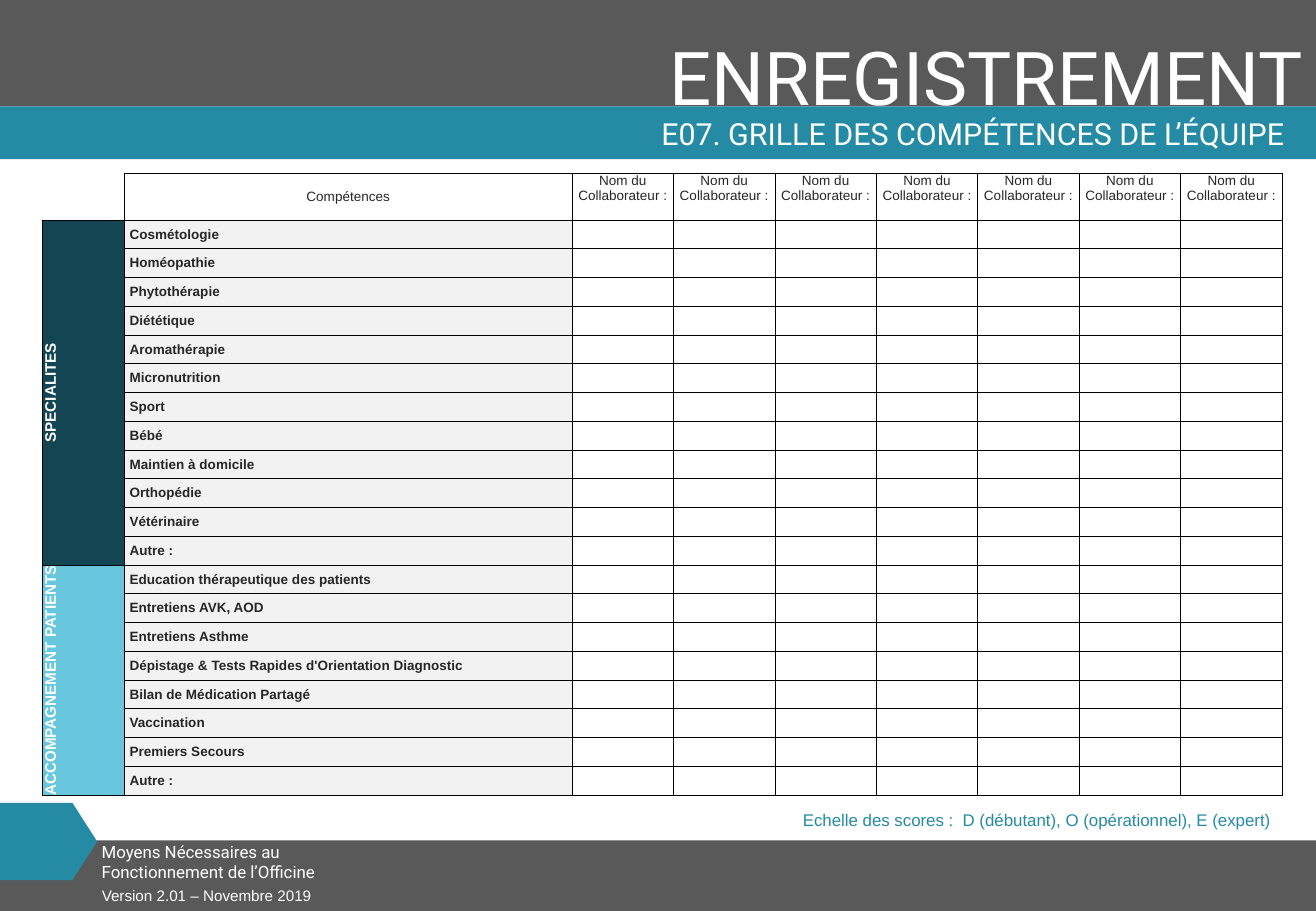
from dataclasses import dataclass

import pptx
import pptx.dml.color
import pptx.enum.shapes
import pptx.enum.text
import pptx.oxml
import pptx.oxml.ns
import pptx.util

Pt = pptx.util.Pt
RGB = pptx.dml.color.RGBColor.from_string
ALIGN = pptx.enum.text.PP_ALIGN
ANCHOR = pptx.enum.text.MSO_ANCHOR
SHAPE = pptx.enum.shapes.MSO_SHAPE


@dataclass(frozen=True)
class Theme:
    grey: str = "595959"
    teal: str = "258BA4"
    navy: str = "134552"
    sky: str = "68C6DD"
    pale: str = "F2F2F2"
    ink: str = "262626"
    white: str = "FFFFFF"
    black: str = "000000"
    heading: str = "Roboto"
    body: str = "Arial"
    banner_size: int = 44
    title_size: int = 18
    note_size: int = 10
    group_size: int = 9
    cell_size: int = 8


theme = Theme()


def write(tf, text, size, color, font=theme.body, align=ALIGN.LEFT, bold=False):
    """Fill a text frame with one formatted paragraph and return it."""
    p = tf.paragraphs[0]
    p.text = text
    p.alignment = align
    for r in p.runs:
        r.font.size = Pt(size)
        r.font.name = font
        r.font.bold = bold
        r.font.color.rgb = RGB(color)
    return p


def style_cell(cell, sides, fill=None, inset=0, anchor=ANCHOR.MIDDLE):
    """Set margins, anchor, fill and the thin borders on the given sides."""
    cell.margin_left = cell.margin_right = Pt(inset)
    cell.margin_top = cell.margin_bottom = 0
    cell.vertical_anchor = anchor
    if fill:
        cell.fill.solid()
        cell.fill.fore_color.rgb = RGB(fill)
    else:
        cell.fill.background()
    tcPr = cell._tc.get_or_add_tcPr()
    for i, side in enumerate(sides):
        tcPr.insert(i, pptx.oxml.parse_xml(
            f'<a:ln{side} {pptx.oxml.ns.nsdecls("a")} w="{Pt(0.5)}"><a:solidFill>'
            f'<a:srgbClr val="{theme.black}"/></a:solidFill></a:ln{side}>'))
    if not cell.text_frame.text:
        cell.text_frame.paragraphs[0]._p.append(pptx.oxml.parse_xml(
            f'<a:endParaRPr {pptx.oxml.ns.nsdecls("a")} sz="{theme.cell_size * 100}"/>'))


prs = pptx.Presentation()
prs.slide_width, prs.slide_height = Pt(779.76), Pt(540)
s = prs.slides.add_slide(prs.slide_layouts[6])

# Bands and banner; the teal band overlaps the foot of the banner text
bands = [
    (SHAPE.RECTANGLE, 0, 498.2, 779.76, 41.8, theme.grey),
    (SHAPE.RECTANGLE, 0, 0, 779.76, 63, theme.grey),
    (SHAPE.RECTANGLE, 0, 63, 779.76, 31.3, theme.teal),
    (SHAPE.PENTAGON, 0, 476, 57.6, 45.7, theme.teal),
]
texts = [
    ("ENREGISTREMENT", 359.3, 15.1, 420.4, 60.5, theme.banner_size, theme.white,
     theme.heading, ALIGN.RIGHT, False),
    ("Moyens Nécessaires au Fonctionnement de l’Officine", 53.2, 495.4, 182.2, 31.7,
     theme.note_size, theme.white, theme.heading, ALIGN.LEFT, True),
    ("Version 2.01 – Novembre 2019", 53.2, 522, 423.4, 18, theme.group_size,
     theme.white, theme.body, ALIGN.LEFT, True),
    ("E07. GRILLE DES COMPÉTENCES DE L’ÉQUIPE", 90.7, 67, 677.5, 26.6,
     theme.title_size, theme.white, theme.heading, ALIGN.RIGHT, True),
    ("Echelle des scores :  D (débutant), O (opérationnel), E (expert)", 463, 476.6,
     296.6, 19.4, theme.note_size, theme.teal, theme.body, ALIGN.RIGHT, False),
]
boxes = []
for text, x, y, w, h, size, color, font, align, wrap in texts:
    sp = s.shapes.add_textbox(Pt(x), Pt(y), Pt(w), Pt(h))
    sp.text_frame.word_wrap = wrap
    write(sp.text_frame, text, size, color, font, align)
    boxes.append(sp)
title = boxes[3].text_frame
title.vertical_anchor = ANCHOR.MIDDLE
title.paragraphs[0].line_spacing = 0.9

banner = boxes[0]._element
for kind, x, y, w, h, color in bands:
    sp = s.shapes.add_shape(kind, Pt(x), Pt(y), Pt(w), Pt(h))
    sp.shadow.inherit = False
    sp.fill.solid()
    sp.fill.fore_color.rgb = RGB(color)
    sp.line.fill.background()
    if kind == SHAPE.PENTAGON:
        sp.adjustments[0] = 0.32
    # Grey bands go behind the banner, teal shapes in front of it
    if color == theme.grey:
        banner.addprevious(sp._element)
    else:
        boxes[1]._element.addprevious(sp._element)

# Skills grid
groups = [
    ("SPECIALITES", theme.navy,
     ["Cosmétologie", "Homéopathie", "Phytothérapie", "Diététique", "Aromathérapie",
      "Micronutrition", "Sport", "Bébé", "Maintien à domicile", "Orthopédie",
      "Vétérinaire", "Autre :"]),
    ("ACCOMPAGNEMENT PATIENTS", theme.sky,
     ["Education thérapeutique des patients", "Entretiens AVK, AOD",
      "Entretiens Asthme", "Dépistage & Tests Rapides d'Orientation Diagnostic",
      "Bilan de Médication Partagé", "Vaccination", "Premiers Secours", "Autre :"]),
]
members = 7
row_heights = [28] + [17.04] * sum(len(skills) for _, _, skills in groups)
col_widths = [48.8, 265.2] + [60.1] * members
frame = s.shapes.add_table(len(row_heights), len(col_widths), Pt(25), Pt(102.5),
                           Pt(sum(col_widths)), Pt(sum(row_heights)))
table = frame.table
table.first_row = table.horz_banding = False
for col, width in zip(table.columns, col_widths):
    col.width = Pt(width)
for row, height in zip(table.rows, row_heights):
    row.height = Pt(height)

style_cell(table.cell(0, 0), "RB")
for c in range(1, len(col_widths)):
    cell = table.cell(0, c)
    write(cell.text_frame, "Compétences" if c == 1 else "Nom du Collaborateur :",
          theme.cell_size, theme.ink, align=ALIGN.CENTER)
    style_cell(cell, "LRTB", anchor=ANCHOR.MIDDLE if c == 1 else ANCHOR.TOP)

first = 1
for name, color, skills in groups:
    head = table.cell(first, 0)
    head.merge(table.cell(first + len(skills) - 1, 0))
    write(head.text_frame, name, theme.group_size, theme.white,
          align=ALIGN.CENTER, bold=True)
    for r, skill in enumerate(skills, first):
        style_cell(table.cell(r, 0), "LRTB", color)
        write(table.cell(r, 1).text_frame, skill, theme.cell_size, theme.ink, bold=True)
        style_cell(table.cell(r, 1), "LRTB", theme.pale, inset=3)
        for c in range(2, len(col_widths)):
            style_cell(table.cell(r, c), "LRTB")
    head._tc.get_or_add_tcPr().set("vert", "vert270")
    first += len(skills)

prs.save("out.pptx")
